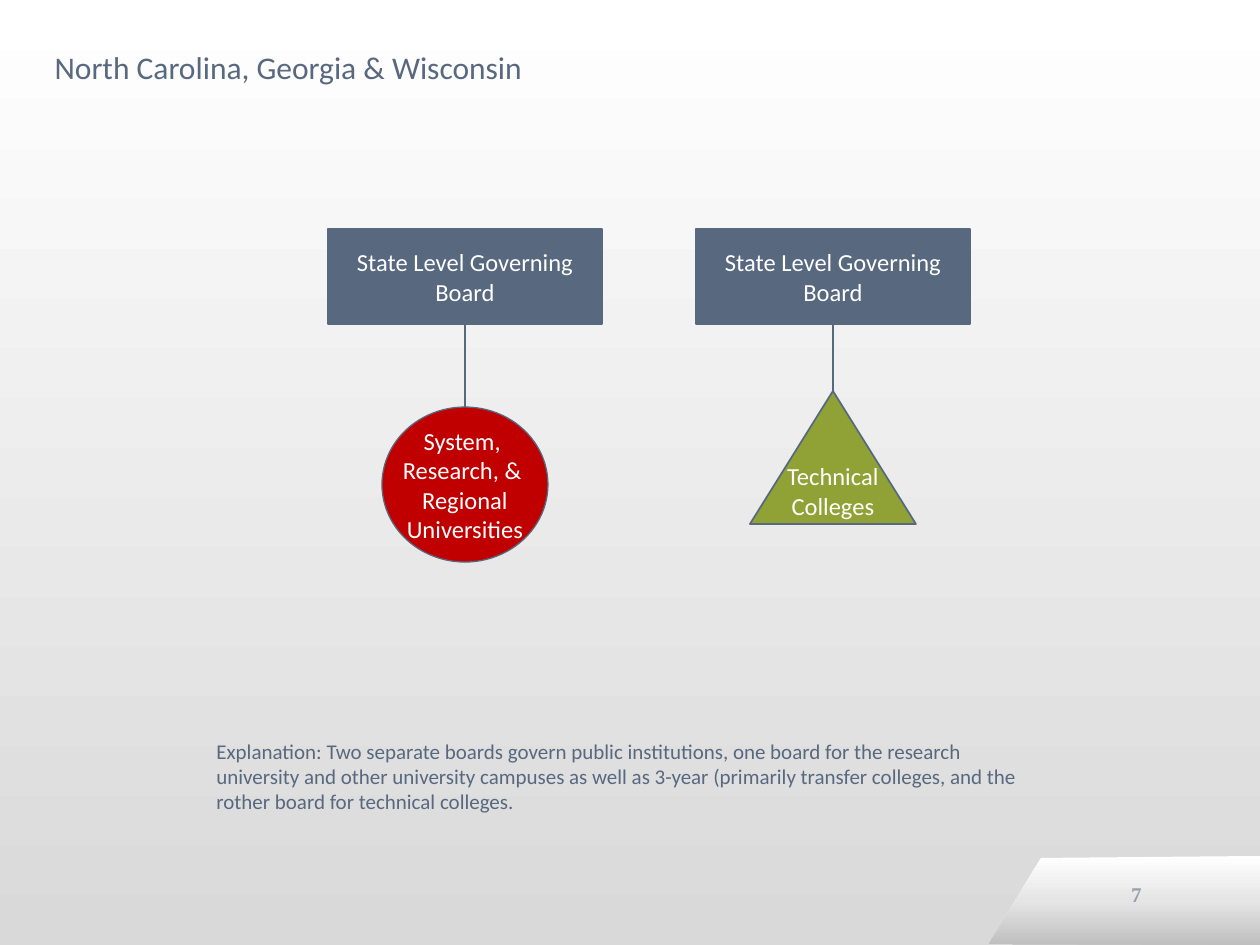
from copy import deepcopy

from pptx import Presentation
from pptx.dml.color import RGBColor
from pptx.enum.shapes import MSO_CONNECTOR as Link, MSO_SHAPE as Shape
from pptx.enum.text import MSO_ANCHOR as Anchor, PP_ALIGN as Align
from pptx.oxml.ns import qn
from pptx.util import Pt
from lxml.etree import SubElement

SCALE = 914400 / 126
SLATE, WHITE, RED, GREEN = "58687F", "FFFFFF", "C00000", "90A236"
TITLE_ONLY = 5


def px(value):
    return round(value * SCALE)


def color(code):
    return RGBColor.from_string(code)


def assign(target, values):
    for name, value in values.items():
        setattr(target, name, value)


def place(item, box):
    names = ("left", "top", "width", "height")
    assign(item, {name: px(value) for name, value in zip(names, box)})


def write(item, text, size, code, font="Calibri", align=Align.LEFT, bold=False, **frame_values):
    frame = item.text_frame
    assign(frame, {"word_wrap": True, "vertical_anchor": Anchor.TOP, **frame_values})
    para = frame.paragraphs[0]
    para.text = text
    para.alignment = align
    for span in para.runs:
        assign(span.font, {"name": font, "size": Pt(size), "bold": bold})
        span.font.color.rgb = color(code)
    for line_break in para._p.findall(qn("a:br")):
        line_break.insert(0, deepcopy(para.runs[0]._r.rPr))


def shade(fill, element, codes):
    fill.gradient()
    fill.gradient_angle = 270
    stops = element.find(".//" + qn("a:gsLst"))
    while len(stops) < len(codes):
        stops.append(deepcopy(stops[-1]))
    for index, (stop, code) in enumerate(zip(fill.gradient_stops, codes)):
        stop.position = index / (len(codes) - 1)
        stop.color.rgb = color(code)


def outline(line, weight=0.75):
    line.color.rgb = color(SLATE)
    line.width = Pt(weight)


def add_figure(page, kind, box, code, weight, text, **frame_values):
    figure = page.shapes.add_shape(kind, *map(px, box))
    figure.shadow.inherit = False
    figure.fill.solid()
    figure.fill.fore_color.rgb = color(code)
    outline(figure.line, weight)
    write(figure, text, 14, WHITE, align=Align.CENTER, vertical_anchor=Anchor.MIDDLE, **frame_values)
    return figure


def add_text(page, box, text, size, code, **values):
    item = page.shapes.add_textbox(*map(px, box))
    write(item, text, size, code, **values)


def add_column(page, box, kind, drop, depth, code, weight, text, **frame_values):
    left, top, width, height = box
    board = add_figure(page, Shape.RECTANGLE, box, SLATE, 0.75, "State Level Governing Board")
    sector_width = 166
    sector_box = (left + (width - sector_width) // 2, top + height + drop, sector_width, depth)
    sector = add_figure(page, kind, sector_box, code, weight, text, word_wrap=False, **frame_values)
    link = page.shapes.add_connector(Link.STRAIGHT, 0, 0, 0, 0)
    link.begin_connect(board, 2)
    link.end_connect(sector, 0)
    outline(link.line)
    SubElement(link._element.spPr, qn("a:effectLst"))


def add_corner(page, box):
    left, top, width, height = box
    right, bottom = left + width, top + height
    builder = page.shapes.build_freeform(right, top, scale=SCALE)
    builder.add_line_segments([(left + 52, top + 2), (left, bottom - 1), (right, bottom)])
    corner = builder.convert_to_shape()
    corner.shadow.inherit = False
    corner.line.fill.background()
    shade(corner.fill, corner._element, (WHITE, "E5E5E5", "BFBFBF"))
    add_text(page, (left + 81, top + 13, 84, 50), "7", 12, "9AA0AB", font="Times New Roman",
             align=Align.RIGHT, bold=True, vertical_anchor=Anchor.MIDDLE)


def add_title(page, box):
    title = page.shapes.title
    place(title, box)
    write(title, "North Carolina, Georgia & Wisconsin", 18, SLATE, word_wrap=False)


def main():
    deck = Presentation()
    assign(deck, {"slide_width": px(1260), "slide_height": px(945)})
    page = deck.slides.add_slide(deck.slide_layouts[TITLE_ONLY])
    shade(page.background.fill, page._element, (WHITE, "D9D9D9"))
    add_corner(page, (989, 856, 271, 89))
    add_title(page, (42, 42, 498, 50))
    margins = dict.fromkeys(("margin_left", "margin_top", "margin_right", "margin_bottom"), 0)
    add_column(page, (328, 229, 274, 95), Shape.OVAL, 83, 155, RED, 0.75,
               "System, \vResearch, & \vRegional\vUniversities", **margins)
    add_column(page, (696, 229, 274, 95), Shape.ISOSCELES_TRIANGLE, 67, 133, GREEN, 1,
               "Technical\vColleges")
    add_text(page, (204, 732, 851, 89),
             "Explanation: Two separate boards govern public institutions, one board for the "
             "research university and other university campuses as well as 3-year (primarily "
             "transfer colleges, and the rother board for technical colleges.", 12, SLATE)
    deck.save("out.pptx")


if __name__ == "__main__":
    main()
